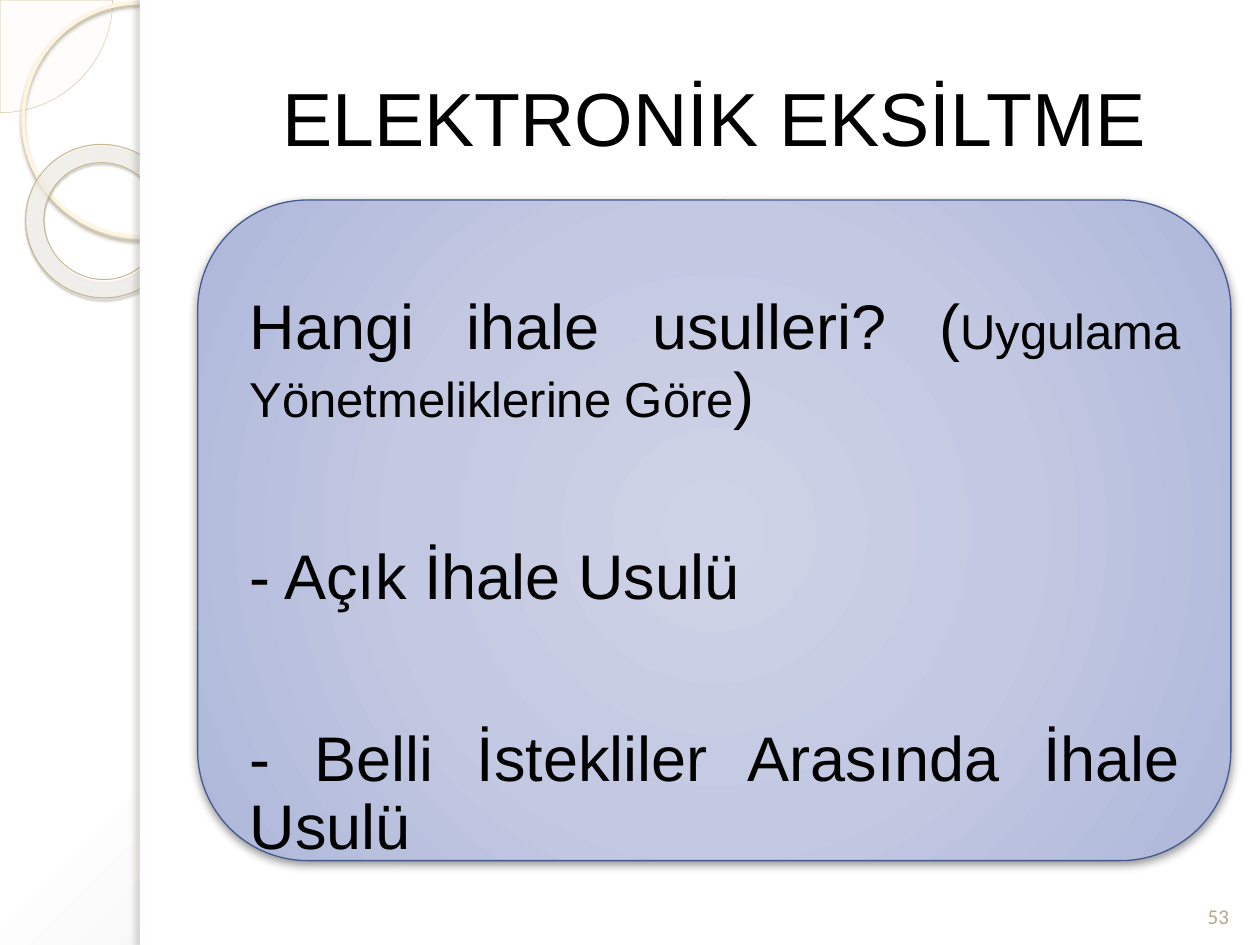
from pptx import Presentation
from pptx.util import Pt
from pptx.dml.color import RGBColor as RGB
from pptx.enum.shapes import MSO_SHAPE as Kind
from pptx.enum.text import MSO_ANCHOR as Anchor, PP_ALIGN as Align
from pptx.oxml import parse_xml
from pptx.oxml.ns import nsdecls

BLACK = RGB(0, 0, 0)
WHITE = RGB(255, 255, 255)
CREAM = RGB(0xFE, 0xFA, 0xF4)
TAN = RGB(0xD3, 0xC3, 0x9F)
PALE = RGB(0xFF, 0xF5, 0xDE)
SAND = RGB(0xC7, 0xB8, 0x93)
BLUE = RGB(0x47, 0x5A, 0x8D)
KHAKI = RGB(0xB6, 0xA9, 0x8A)

TITLE = "ELEKTRONİK EKSİLTME"
BODY = [
    [("Hangi ihale usulleri? (", 36), ("Uygulama Yönetmeliklerine Göre", 28), (")", 36)],
    [("- Açık İhale Usulü", 36)],
    [("- Belli İstekliler Arasında İhale Usulü", 36)],
]
PAGE = "53"

BACK = ([(0, "FFFFFF", 100), (40, "FFFFFF", 100), (100, "C5C5C5", 100)], (-24, -20, 124, 120))
RING = ([(0, "FFFCF6", 70), (70, "FFFEFB", 55), (100, "F0D28E", 60)], (-408, -50, 508, 150))
CARD = ([(0, "CFD3E7", 100), (50, "C3C9E2", 100), (97, "AFB8DA", 100), (100, "A8B2DA", 100)],
        (50, 50, 50, 50))

SHAPES = [
    dict(kind=Kind.PIE, at=(-64.2, -64.2, 128.6, 128.6), adj=(0, 54), fill=CREAM, alpha=33,
         line=(TAN, 0.25)),
    dict(kind=Kind.OVAL, at=(13.2, 1.5, 133.7, 133.7), line=(PALE, 2.15),
         shade=("B0A68F", 85, 2, 2, 90)),
    dict(kind=Kind.DONUT, at=(14.4, 82.8, 88.6, 87.1), turn=38.6, adj=(0.12,), grad=RING,
         line=(SAND, 0.58), shade=("5A5444", 35, 1, 1.2, 75)),
    dict(kind=Kind.RECTANGLE, at=(80, 0, 640, 540), fill=WHITE),
    dict(kind=Kind.RECTANGLE, at=(80, 0, 5.8, 540), fill=WHITE,
         shade=("736F63", 25, 3, 3, 180)),
    dict(kind=Kind.ROUNDED_RECTANGLE, at=(113, 114.3, 590.4, 377.5), grad=CARD,
         line=(BLUE, 0.75), shade=("000000", 43, 5, 2, 90)),
]


def tint(hue, alpha):
    return f'<a:srgbClr val="{hue}"><a:alpha val="{alpha * 1000}"/></a:srgbClr>'


def blend(props, stops, rect):
    marks = "".join(f'<a:gs pos="{p * 1000}">{tint(c, a)}</a:gs>' for p, c, a in stops)
    sides = " ".join(f'{s}="{v * 1000}"' for s, v in zip("ltrb", rect))
    solid = props.xpath("./a:solidFill")[0]
    props.replace(solid, parse_xml(
        f'<a:gradFill {nsdecls("a")} rotWithShape="1"><a:gsLst>{marks}</a:gsLst>'
        f'<a:path path="circle"><a:fillToRect {sides}/></a:path></a:gradFill>'))


def shadow(props, hue, alpha, blur, dist, turn):
    props.xpath("./a:effectLst")[0].append(parse_xml(
        f'<a:outerShdw {nsdecls("a")} blurRad="{Pt(blur)}" dist="{Pt(dist)}" '
        f'dir="{turn * 60000}" algn="ctr" rotWithShape="0">{tint(hue, alpha)}</a:outerShdw>'))


def draw(slide, kind, at, adj=(), turn=0, fill=None, alpha=100, grad=None, line=None, shade=None):
    shape = slide.shapes.add_shape(kind, *map(Pt, at))
    shape.rotation = turn
    for i, value in enumerate(adj):
        shape.adjustments[i] = value
    props = shape.element.spPr
    if fill or grad:
        shape.fill.solid()
        shape.fill.fore_color.rgb = fill or WHITE
    else:
        shape.fill.background()
    if alpha < 100:
        props.xpath("./a:solidFill/a:srgbClr")[0].append(
            parse_xml(f'<a:alpha {nsdecls("a")} val="{alpha * 1000}"/>'))
    if grad:
        blend(props, *grad)
    if line:
        shape.line.color.rgb, shape.line.width = line[0], Pt(line[1])
    else:
        shape.line.fill.background()
    shape.shadow.inherit = False
    if shade:
        shadow(props, *shade)


def write(box, at, paras, face, color, inset, form, anchor):
    box.left, box.top, box.width, box.height = map(Pt, at)
    frame = box.text_frame
    frame.word_wrap = True
    frame.vertical_anchor = anchor
    for side in ("left", "top", "right", "bottom"):
        setattr(frame, f"margin_{side}", Pt(inset))
    for i, runs in enumerate(paras):
        para = frame.add_paragraph() if i else frame.paragraphs[0]
        for name, value in form.items():
            setattr(para, name, value)
        for text, size in runs:
            run = para.add_run()
            run.text = text
            run.font.name, run.font.size = face, Pt(size)
            run.font.color.rgb = color


def main():
    deck = Presentation()
    deck.slide_width, deck.slide_height = Pt(720), Pt(540)
    slide = deck.slides.add_slide(deck.slide_layouts[5])
    slide.background.fill.solid()
    slide.background.fill.fore_color.rgb = WHITE
    blend(slide.element.xpath(".//p:bgPr")[0], *BACK)

    for item in SHAPES:
        draw(slide, **item)

    title = slide.shapes.title
    slide.shapes.element.append(title.element)
    write(title, (113, 21.6, 590.4, 90), [[(TITLE, 43)]], "Arial", BLACK, 3.6,
          dict(alignment=Align.CENTER), Anchor.MIDDLE)
    body = slide.shapes.add_textbox(0, 0, 0, 0)
    write(body, (131.8, 158, 553.7, 340), BODY, "Arial", BLACK, 10.8,
          dict(alignment=Align.JUSTIFY, line_spacing=0.9, space_after=Pt(65)), Anchor.TOP)
    page = slide.shapes.add_textbox(0, 0, 0, 0)
    write(page, (678.2, 496.8, 36, 37.4), [[(PAGE, 12)]], "Calibri", KHAKI, 3.6,
          dict(alignment=Align.CENTER), Anchor.BOTTOM)
    deck.save("out.pptx")


if __name__ == "__main__":
    main()
